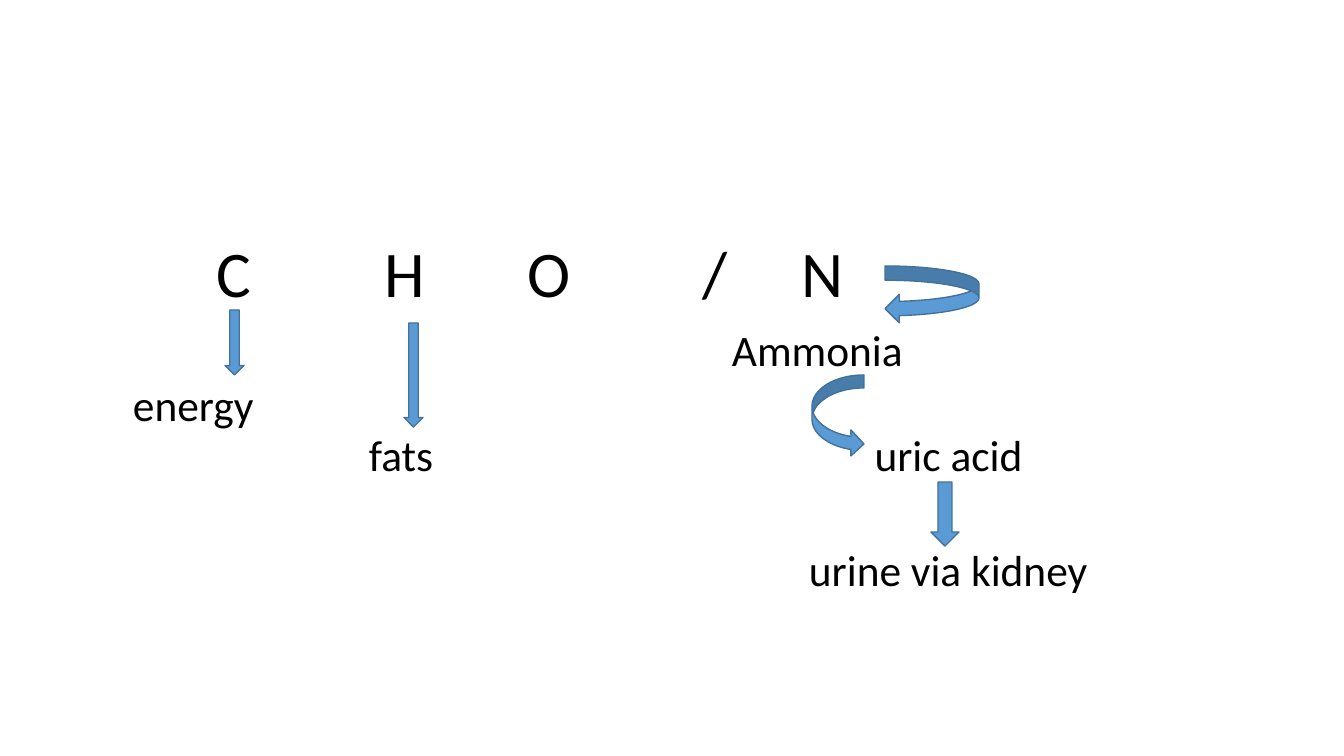
from pptx import Presentation
from pptx.dml.color import RGBColor
from pptx.enum.shapes import MSO_SHAPE
from pptx.enum.text import MSO_ANCHOR, MSO_AUTO_SIZE, PP_ALIGN
from pptx.oxml import parse_xml
from pptx.oxml.ns import nsdecls
from pptx.util import Emu, Pt

EMU_PER_PIXEL = 914400 / 100.8
COLORS = {"text": "000000", "arrow": "5B9BD5", "outline": "42719B"}
FONT = "Calibri"
SPACE_WIDTH = 0.226  # width of a space, as a share of the text size
BODY_BOX = (17, 249, 1159, 477)
BODY_INSET = 10
LARGE, NORMAL = 46.5, 31

# Point size, space before in points, left edge in px, first word,
# then (gap in space widths, word) for each further word
LINES = [
    (LARGE, 0, 217, "C", [(9, "H"), (7, "O"), (9, "/"), (5, "N")]),
    (NORMAL, 20.4, 732, "Ammonia", []),
    (NORMAL, 13, 133, "energy", []),
    (NORMAL, 10, 369, "fats", [(45, "uric acid")]),
    (NORMAL, 56, 809, "urine via kidney", []),
]

ARROWS = [
    (MSO_SHAPE.CURVED_LEFT_ARROW, (885, 266, 94, 57)),
    (MSO_SHAPE.DOWN_ARROW, (931, 482, 28, 64)),
    (MSO_SHAPE.DOWN_ARROW, (404, 323, 19, 104)),
    (MSO_SHAPE.DOWN_ARROW, (225, 310, 19, 65)),
    (MSO_SHAPE.CURVED_RIGHT_ARROW, (812, 375, 52, 82)),
]


def px(length):
    return Emu(round(length * EMU_PER_PIXEL))


def color(name):
    return RGBColor.from_string(COLORS[name])


def apply_format(target, values):
    for name, value in values.items():
        setattr(target, name, value)


class SlideBuilder:
    def __init__(self, deck):
        self.page = deck.slides.add_slide(deck.slide_layouts[1])
        title = self.page.shapes.title
        title.element.getparent().remove(title.element)

    def body(self, lines):
        box = self.page.placeholders[1]
        apply_format(box, dict(zip(("left", "top", "width", "height"), map(px, BODY_BOX))))
        frame = box.text_frame
        apply_format(frame, {
            "word_wrap": True, "auto_size": MSO_AUTO_SIZE.NONE,
            "vertical_anchor": MSO_ANCHOR.TOP,
            "margin_left": px(BODY_INSET), "margin_right": px(BODY_INSET),
            "margin_top": px(5), "margin_bottom": px(5),
        })
        for index, line in enumerate(lines):
            para = frame.add_paragraph() if index else frame.paragraphs[0]
            self.spaced_line(para, *line)

    def spaced_line(self, para, size, space_before, left, first_word, further_words):
        """Indent a line to its left edge and widen the gaps between its words."""
        apply_format(para, {
            "alignment": PP_ALIGN.LEFT, "line_spacing": 0.7,
            "space_before": Pt(space_before), "space_after": Pt(0),
        })
        properties = para._p.get_or_add_pPr()
        properties.set("marL", str(px(left - BODY_BOX[0] - BODY_INSET)))
        properties.set("indent", "0")
        properties.append(parse_xml(f"<a:buNone {nsdecls('a')}/>"))
        self.span(para, first_word, size)
        for gap, word in further_words:
            space = self.span(para, " ", size)
            extra = (gap - 1) * SPACE_WIDTH * size
            space.font._element.set("spc", str(round(extra * 100)))
            self.span(para, word, size)

    def span(self, para, text, size):
        span = para.add_run()
        span.text = text
        apply_format(span.font, {"name": FONT, "size": Pt(size)})
        span.font.color.rgb = color("text")
        return span

    def arrow(self, kind, bounds):
        shape = self.page.shapes.add_shape(kind, *map(px, bounds))
        shape.shadow.inherit = False
        shape.fill.solid()
        shape.fill.fore_color.rgb = color("arrow")
        shape.line.color.rgb = color("outline")
        shape.line.width = Pt(1)


def main():
    deck = Presentation()
    apply_format(deck, {"slide_width": px(1344), "slide_height": px(756)})
    builder = SlideBuilder(deck)
    builder.body(LINES)
    for kind, bounds in ARROWS:
        builder.arrow(kind, bounds)
    deck.save("out.pptx")


if __name__ == "__main__":
    main()
